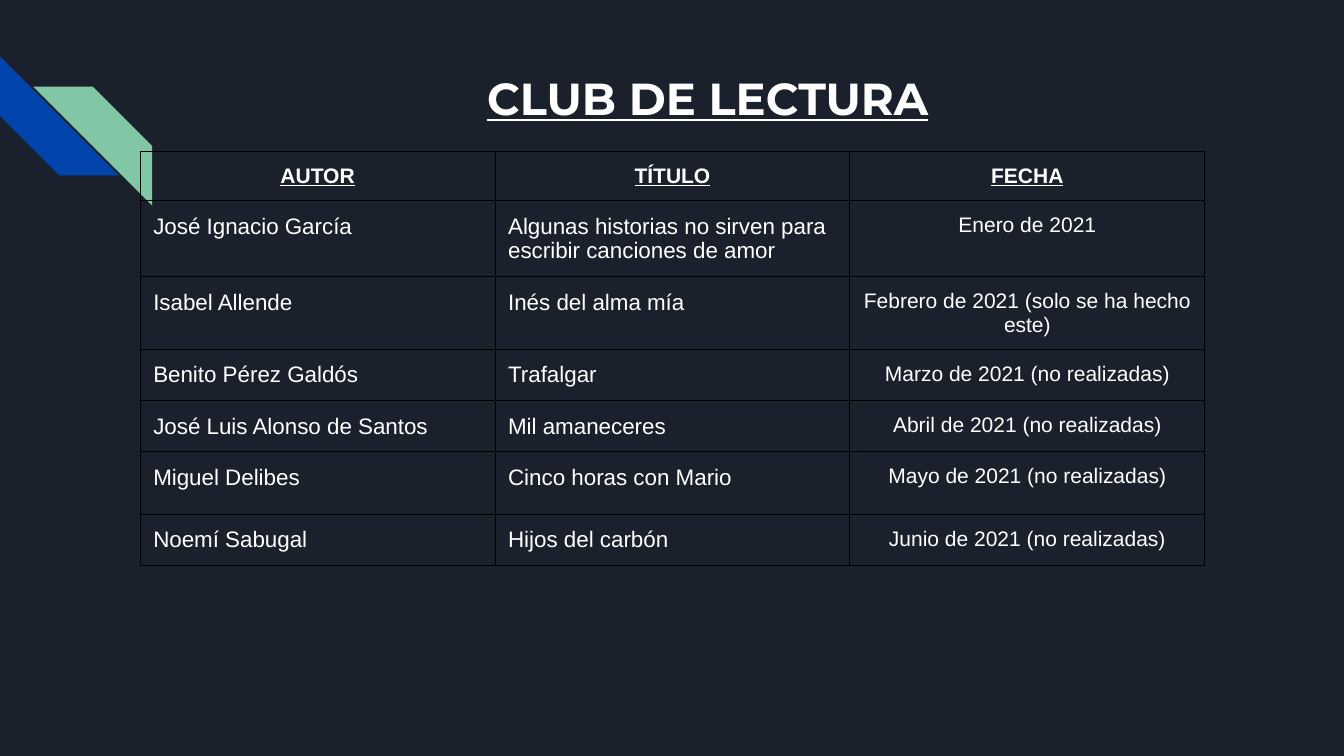
from dataclasses import dataclass

from lxml import etree
from pptx import Presentation
from pptx.dml.color import RGBColor
from pptx.enum.shapes import MSO_SHAPE
from pptx.enum.text import MSO_ANCHOR, MSO_AUTO_SIZE, PP_ALIGN
from pptx.oxml.ns import qn
from pptx.util import Inches, Pt

STRIPE = MSO_SHAPE.DIAGONAL_STRIPE
TOP = MSO_ANCHOR.TOP
NO_AUTOFIT = MSO_AUTO_SIZE.NONE
LEFT, CENTER = PP_ALIGN.LEFT, PP_ALIGN.CENTER


@dataclass(frozen=True)
class Theme:
    background: str = "1B212C"
    text: str = "FFFFFF"
    blue: str = "0145AC"
    green: str = "82C7A5"
    border: str = "000000"
    title_font: str = "Montserrat"
    body_font: str = "Arial"
    title_size: int = 32
    body_size: int = 16
    small_size: int = 15
    border_width: float = 0.75
    inset: float = 0.13


THEME = Theme()

HEADINGS = ("AUTOR", "TÍTULO", "FECHA")
READINGS = (
    ("José Ignacio García",
     "Algunas historias no sirven para escribir canciones de amor",
     "Enero de 2021"),
    ("Isabel Allende", "Inés del alma mía",
     "Febrero de 2021 (solo se ha hecho este)"),
    ("Benito Pérez Galdós", "Trafalgar", "Marzo de 2021 (no realizadas)"),
    ("José Luis Alonso de Santos", "Mil amaneceres",
     "Abril de 2021 (no realizadas)"),
    ("Miguel Delibes", "Cinco horas con Mario",
     "Mayo de 2021 (no realizadas)"),
    ("Noemí Sabugal", "Hijos del carbón", "Junio de 2021 (no realizadas)"),
)
ROW_HEIGHTS = (0.46, 0.46, 0.46, 0.46, 0.46, 0.62, 0.46)
COLUMN_WIDTH = 3.52


def rgb(color):
    return RGBColor.from_string(color)


def set_insets(box):
    """Apply the theme inset to a text frame or a table cell."""
    inset = Inches(THEME.inset)
    box.margin_left = box.margin_right = inset
    box.margin_top = box.margin_bottom = inset


def write(tf, text, size, font, align, emphasis):
    """Fill a text frame; emphasis means bold and underlined."""
    tf.text = text
    p = tf.paragraphs[0]
    p.alignment = align
    f = p.runs[0].font
    f.name = font
    f.size = Pt(size)
    f.bold = f.underline = emphasis
    f.color.rgb = rgb(THEME.text)


def add_stripe(s, left, top, rotation, color):
    side = Inches(1.18)
    sp = s.shapes.add_shape(STRIPE, Inches(left), Inches(top), side, side)
    sp.rotation = rotation
    sp.shadow.inherit = False
    sp.fill.solid()
    sp.fill.fore_color.rgb = rgb(color)
    sp.line.fill.background()


def set_title(s, text):
    title = s.shapes.title
    title.left, title.top = Inches(1.89), Inches(0.57)
    title.width, title.height = Inches(10.26), Inches(0.75)
    tf = title.text_frame
    tf.auto_size = NO_AUTOFIT
    tf.vertical_anchor = TOP
    set_insets(tf)
    write(tf, text, THEME.title_size, THEME.title_font, CENTER, True)


def add_borders(cell):
    tc_pr = cell._tc.get_or_add_tcPr()
    for side in ("a:lnL", "a:lnR", "a:lnT", "a:lnB"):
        ln = etree.SubElement(tc_pr, qn(side), w=str(Pt(THEME.border_width)))
        fill = etree.SubElement(ln, qn("a:solidFill"))
        etree.SubElement(fill, qn("a:srgbClr"), val=THEME.border)


def add_reading_table(s):
    rows = (HEADINGS,) + READINGS
    columns = len(HEADINGS)
    table = s.shapes.add_table(
        len(rows), columns, Inches(1.39), Inches(1.5),
        Inches(COLUMN_WIDTH * columns), Inches(sum(ROW_HEIGHTS))).table
    table.first_row = table.horz_banding = False
    for column in table.columns:
        column.width = Inches(COLUMN_WIDTH)
    for i, (values, height) in enumerate(zip(rows, ROW_HEIGHTS)):
        table.rows[i].height = Inches(height)
        for j, value in enumerate(values):
            cell = table.cell(i, j)
            heading = i == 0
            centered = heading or j == columns - 1
            size = THEME.small_size if centered else THEME.body_size
            set_insets(cell)
            write(cell.text_frame, value, size, THEME.body_font,
                  CENTER if centered else LEFT, heading)
            add_borders(cell)
            cell.fill.background()


def main():
    prs = Presentation()
    prs.slide_width, prs.slide_height = Inches(13.33), Inches(7.5)
    s = prs.slides.add_slide(prs.slide_layouts[5])
    s.background.fill.solid()
    s.background.fill.fore_color.rgb = rgb(THEME.background)
    add_stripe(s, 0, 0.56, 270, THEME.blue)
    add_stripe(s, 0.33, 0.86, 90, THEME.green)
    set_title(s, "CLUB DE LECTURA")
    add_reading_table(s)
    prs.save("out.pptx")


if __name__ == "__main__":
    main()
